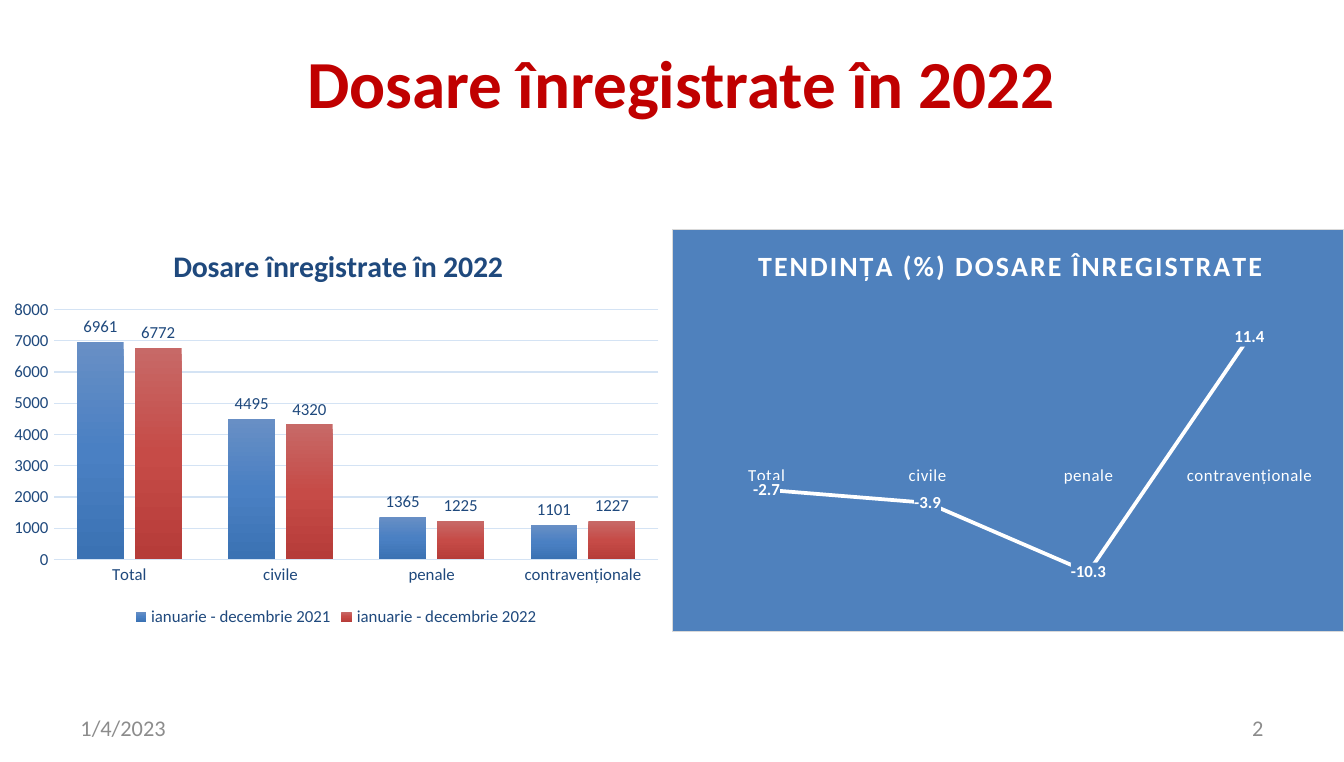
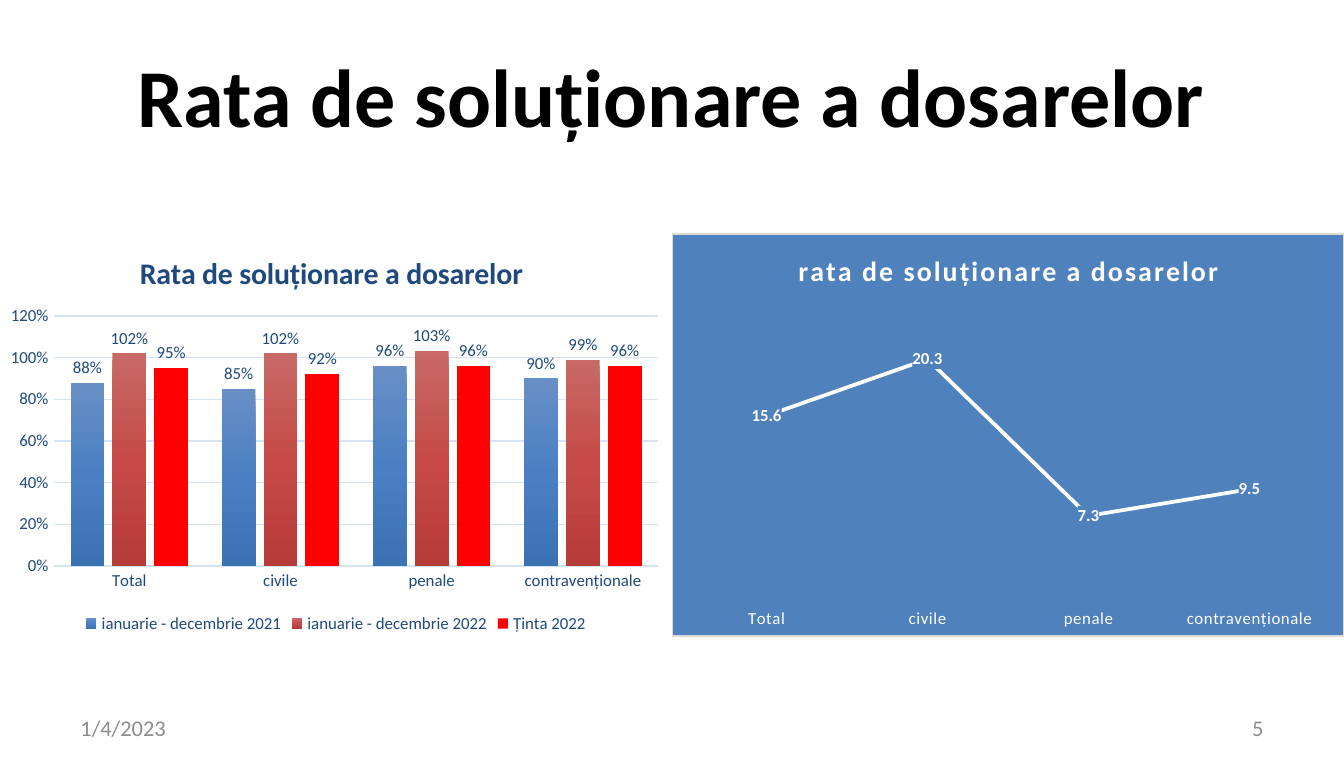
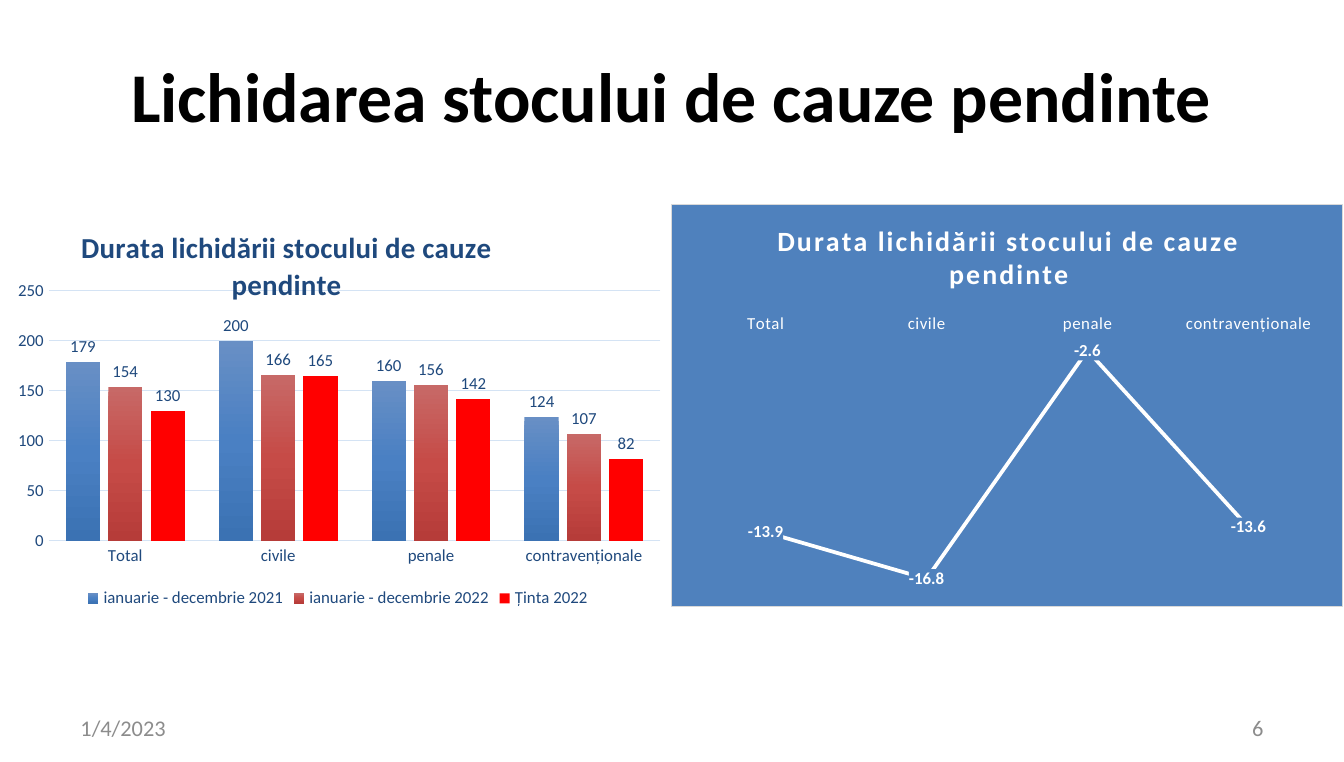
from copy import deepcopy

from lxml import etree
from pptx import Presentation
from pptx.chart.data import CategoryChartData
from pptx.dml.color import RGBColor
from pptx.enum.chart import XL_CHART_TYPE, XL_LABEL_POSITION, XL_LEGEND_POSITION, XL_MARKER_STYLE, XL_TICK_MARK
from pptx.enum.text import MSO_ANCHOR, MSO_AUTO_SIZE, PP_ALIGN
from pptx.oxml import parse_xml
from pptx.oxml.ns import nsdecls, qn
from pptx.util import Pt

FONT = "Calibri"
WHITE = RGBColor(0xFF, 0xFF, 0xFF)
BLACK = RGBColor(0x00, 0x00, 0x00)
NAVY = RGBColor(0x1F, 0x49, 0x7D)
BLUE = RGBColor(0x4F, 0x81, 0xBD)
CRIMSON = RGBColor(0xC0, 0x00, 0x00)
RED = RGBColor(0xFF, 0x00, 0x00)
GRAY = RGBColor(0x8C, 0x8C, 0x8C)
BORDER = RGBColor(0xD9, 0xD9, 0xD9)
GRID = RGBColor(0xD4, 0xE3, 0xF4)
BLUE_STOPS = (RGBColor(0x68, 0x8F, 0xC5), RGBColor(0x4A, 0x80, 0xC3), RGBColor(0x3B, 0x72, 0xB3))
RED_STOPS = (RGBColor(0xC7, 0x69, 0x67), RGBColor(0xC6, 0x4B, 0x47), RGBColor(0xB6, 0x3C, 0x39))

CATEGORIES = ("Total", "civile", "penale", "contravenționale")
YEARS = ("ianuarie - decembrie 2021", "ianuarie - decembrie 2022", "Ținta 2022")
DATE = "1/4/2023"
TITLE_BOX = (36, 16.5, 648, 68.5)
DATE_BOX = (36, 378.5, 168, 22)
NUMBER_BOX = (516, 378.5, 168, 22)

SLIDES = [
    {
        "number": 2,
        "title": {"text": "Dosare înregistrate în 2022", "box": (125, 18, 480, 51),
                  "size": 36, "color": CRIMSON, "anchor": MSO_ANCHOR.BOTTOM},
        "columns": {"title": "Dosare înregistrate în 2022", "title_x": 0.25,
                    "box": (0, 122.5, 360, 216), "plot_x": 0.08, "fmt": "General",
                    "rows": ((6961, 4495, 1365, 1101), (6772, 4320, 1225, 1227))},
        "trend": {"title": "TENDINȚA (%) DOSARE ÎNREGISTRATE", "title_x": 0.12,
                  "box": (360, 122.5, 360, 216), "plot": (0.17, 0.81), "scale": (-15, 15),
                  "values": (-2.7, -3.9, -10.3, 11.4)},
    },
    {
        "number": 5,
        "title": {"text": "Rata de soluționare a dosarelor", "size": 44},
        "columns": {"title": "Rata de soluționare a dosarelor", "title_x": 0.2,
                    "box": (0, 126, 360, 216), "plot_x": 0.08, "fmt": "0%",
                    "rows": ((0.88, 0.85, 0.96, 0.9), (1.02, 1.02, 1.03, 0.99),
                             (0.95, 0.92, 0.96, 0.96))},
        "trend": {"title": "rata de soluționare a dosarelor", "title_x": 0.18,
                  "box": (360, 125, 360, 216), "plot": (0.17, 0.75), "scale": (0, 25),
                  "values": (15.6, 20.3, 7.3, 9.5)},
    },
    {
        "number": 6,
        "title": {"text": "Lichidarea stocului de cauze pendinte", "size": 37.4},
        "columns": {"title": "Durata lichidării stocului de cauze pendinte", "title_x": 0.11,
                    "title_size": 15.5,
                    "box": (1, 112.5, 360, 216), "plot_x": 0.07, "fmt": "#,##0",
                    "rows": ((179, 200, 160, 124), (154, 166, 156, 107), (130, 165, 142, 82))},
        "trend": {"title": "Durata lichidării stocului de cauze pendinte", "title_x": 0.15,
                  "box": (359.5, 109, 360, 216), "plot": (0.26, 0.72), "scale": (-18, 0),
                  "values": (-13.9, -16.8, -2.6, -13.6),
                  "kind": XL_CHART_TYPE.LINE_STACKED},
    },
]


def style_font(font, size, color, bold=False, spacing=0):
    for name, value in {"name": FONT, "size": Pt(size), "bold": bold}.items():
        setattr(font, name, value)
    font.color.rgb = color
    if spacing:
        font._rPr.set("spc", str(spacing))


def place(sp, box):
    for name, value in zip(("left", "top", "width", "height"), box):
        setattr(sp, name, Pt(value))


def write_text(sp, text, size, color, bold=False, align=PP_ALIGN.LEFT, anchor=MSO_ANCHOR.MIDDLE):
    tf = sp.text_frame
    for name, value in {"word_wrap": True, "auto_size": MSO_AUTO_SIZE.NONE,
                        "vertical_anchor": anchor}.items():
        setattr(tf, name, value)
    p = tf.paragraphs[0]
    p.alignment = align
    r = p.add_run()
    r.text = text
    style_font(r.font, size, color, bold)


def add_title(s, text, size, box=TITLE_BOX, color=BLACK, anchor=MSO_ANCHOR.MIDDLE):
    place(s.shapes.title, box)
    write_text(s.shapes.title, text, size, color, True, PP_ALIGN.CENTER, anchor)


def add_footer(s, number):
    for box, text, align in ((DATE_BOX, DATE, PP_ALIGN.LEFT),
                             (NUMBER_BOX, str(number), PP_ALIGN.RIGHT)):
        sp = s.shapes.add_textbox(*map(Pt, box))
        write_text(sp, text, 12, GRAY, align=align)


def set_layout(parent, index, **parts):
    for old in parent.findall(qn("c:layout")):
        parent.remove(old)
    layout = parse_xml(f"<c:layout {nsdecls('c')}><c:manualLayout/></c:layout>")
    for name, value in parts.items():
        etree.SubElement(layout[0], qn(f"c:{name}")).set("val", str(value))
    parent.insert(index, layout)


def filled_props(border=None):
    line = (f'<a:ln w="9525"><a:solidFill><a:srgbClr val="{border}"/></a:solidFill></a:ln>'
            if border else "<a:ln><a:noFill/></a:ln>")
    return parse_xml(f'<c:spPr {nsdecls("c", "a")}><a:solidFill><a:srgbClr val="{BLUE}"/>'
                     f"</a:solidFill>{line}</c:spPr>")


def add_chart(s, kind, box, rows, names, title, title_x, title_size, color, plot, spacing=0):
    data = CategoryChartData()
    data.categories = CATEGORIES
    for name, values in zip(names, rows):
        data.add_series(name, values)
    chart = s.shapes.add_chart(kind, *map(Pt, box), data).chart
    style_font(chart.font, 10, BLACK)
    chart.has_title = True
    r = chart.chart_title.text_frame.paragraphs[0].add_run()
    r.text = title
    style_font(r.font, title_size, color, True, spacing)
    set_layout(chart.chart_title._element, 1, xMode="edge", yMode="edge", x=title_x, y=0.03)
    x, y, w, h = plot
    set_layout(chart._chartSpace.chart.plotArea, 0, layoutTarget="inner",
               xMode="edge", yMode="edge", x=x, y=y, w=w, h=h)
    chart.plots[0].vary_by_categories = False
    for axis in (chart.category_axis, chart.value_axis):
        axis.major_tick_mark = axis.minor_tick_mark = XL_TICK_MARK.NONE
    return chart


def add_labels(plot, color, fmt, bold=False):
    plot.has_data_labels = True
    labels = plot.data_labels
    for name, value in {"show_value": True, "number_format": fmt,
                        "number_format_is_linked": False}.items():
        setattr(labels, name, value)
    style_font(labels.font, 9, color, bold)
    return labels


def fill_gradient(ser, colors):
    fill = ser.format.fill
    fill.gradient()
    fill.gradient_angle = 270
    stops = ser._element.find(".//" + qn("a:gsLst"))
    stops.insert(1, deepcopy(stops[0]))
    for stop, position, color in zip(fill.gradient_stops, (0, 0.5, 1), colors):
        stop.position = position
        stop.color.rgb = color


def add_columns(s, title, title_x, box, plot_x, fmt, rows, title_size=16):
    chart = add_chart(s, XL_CHART_TYPE.COLUMN_CLUSTERED, box, rows, YEARS, title, title_x,
                      title_size, NAVY, (plot_x, 0.2, round(0.98 - plot_x, 2), 0.62))
    plot = chart.plots[0]
    plot.gap_width, plot.overlap = 100, -24
    for ser, colors in zip(plot.series, (BLUE_STOPS, RED_STOPS)):
        fill_gradient(ser, colors)
    for ser in list(plot.series)[2:]:
        ser.format.fill.solid()
        ser.format.fill.fore_color.rgb = RED
    add_labels(plot, NAVY, fmt).position = XL_LABEL_POSITION.OUTSIDE_END
    cat, val = chart.category_axis, chart.value_axis
    for axis in (cat, val):
        style_font(axis.tick_labels.font, 9, NAVY)
    for line in (cat.format.line, val.major_gridlines.format.line):
        line.color.rgb = GRID
        line.width = Pt(0.75)
    val.format.line.fill.background()
    val.tick_labels.number_format = fmt
    val.tick_labels.number_format_is_linked = False
    chart.has_legend = True
    chart.legend.position = XL_LEGEND_POSITION.BOTTOM
    chart.legend.include_in_layout = False
    style_font(chart.legend.font, 9, NAVY)


def add_trend(s, title, title_x, box, plot, scale, values, kind=XL_CHART_TYPE.LINE):
    top, height = plot
    chart = add_chart(s, kind, box, (values,), ("Series 1",), title, title_x, 15,
                      WHITE, (0.02, top, 0.96, height), 110)
    chart.has_legend = False
    chart._chartSpace.chart.addnext(filled_props(BORDER))
    ser = chart.plots[0].series[0]
    ser.smooth = False
    ser.marker.style = XL_MARKER_STYLE.NONE
    ser.format.line.color.rgb = WHITE
    ser.format.line.width = Pt(2)
    labels = add_labels(chart.plots[0], WHITE, "0.0", True)
    labels.position = XL_LABEL_POSITION.CENTER
    labels._element.find(qn("c:txPr")).addprevious(filled_props())
    cat, val = chart.category_axis, chart.value_axis
    style_font(cat.tick_labels.font, 9, WHITE, spacing=30)
    cat.format.line.fill.background()
    val.minimum_scale, val.maximum_scale = scale
    val.has_major_gridlines = False
    val.visible = False


def main():
    prs = Presentation()
    prs.slide_width, prs.slide_height = Pt(720), Pt(408)
    for content in SLIDES:
        s = prs.slides.add_slide(prs.slide_layouts[5])
        add_title(s, **content["title"])
        add_footer(s, content["number"])
        add_columns(s, **content["columns"])
        add_trend(s, **content["trend"])
    prs.save("out.pptx")


if __name__ == "__main__":
    main()
